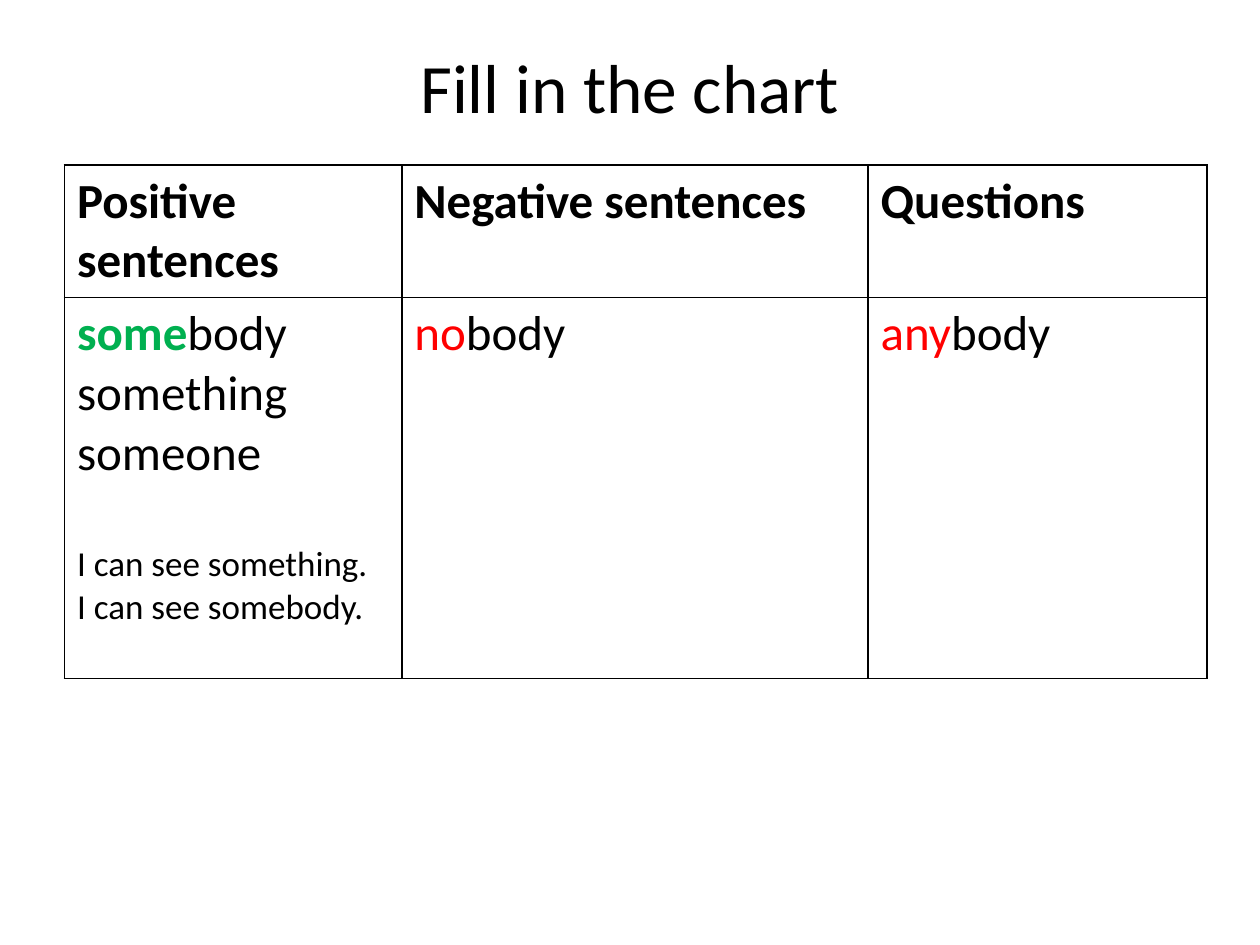
from lxml.etree import SubElement
from pptx import Presentation
from pptx.dml.color import RGBColor
from pptx.enum.text import MSO_ANCHOR, PP_ALIGN
from pptx.oxml.ns import qn
from pptx.util import Cm, Pt

FONT = "Calibri"
BLACK, GREEN, RED = "000000", "00B050", "FF0000"
TITLE = "Fill in the chart"

# Each cell is a list of paragraphs: (runs, size, space before);
# each run is (text, colour, bold)
HEADERS = [
    [([(text, BLACK, True)], 28, 0)]
    for text in ("Positive sentences", "Negative sentences", "Questions")
]
WORDS = [
    [
        ([("some", GREEN, True), ("body", BLACK, False)], 28, 0),
        ([("something", BLACK, False)], 28, 0),
        ([("someone", BLACK, False)], 28, 0),
        ([("I can see something.", BLACK, False)], 20, 34),
        ([("I can see somebody.", BLACK, False)], 20, 0),
    ],
    [([("no", RED, False), ("body", BLACK, False)], 28, 0)],
    [([("any", RED, False), ("body", BLACK, False)], 28, 0)],
]
ROWS = [HEADERS, WORDS]
COLUMN_WIDTHS = [6.8, 9.4, 6.83]
ROW_HEIGHTS = [2.67, 7.68]


def rgb(colour):
    return RGBColor.from_string(colour)


def format_run(run, size, colour, bold=False):
    run.font.name = FONT
    run.font.size = Pt(size)
    run.font.bold = bold
    run.font.color.rgb = rgb(colour)


def add_borders(cell, colour=BLACK, width=1):
    properties = cell._tc.get_or_add_tcPr()
    for side in ("a:lnL", "a:lnR", "a:lnT", "a:lnB"):
        line = SubElement(properties, qn(side), w=str(Pt(width)))
        fill = SubElement(line, qn("a:solidFill"))
        SubElement(fill, qn("a:srgbClr"), val=colour)


def fill_cell(cell, content):
    add_borders(cell)
    cell.fill.background()
    text_frame = cell.text_frame
    for index, (runs, size, space) in enumerate(content):
        paragraph = text_frame.add_paragraph() if index else text_frame.paragraphs[0]
        if space:
            paragraph.space_before = Pt(space)
        for text, colour, bold in runs:
            run = paragraph.add_run()
            run.text = text
            format_run(run, size, colour, bold)


presentation = Presentation()
presentation.slide_width, presentation.slide_height = Cm(25.4), Cm(19.05)
slide = presentation.slides.add_slide(presentation.slide_layouts[6])

# Title
title = slide.shapes.add_textbox(Cm(1.27), Cm(0.76), Cm(22.86), Cm(1.96))
text_frame = title.text_frame
text_frame.word_wrap = True
text_frame.vertical_anchor = MSO_ANCHOR.MIDDLE
text_frame.text = TITLE
paragraph = text_frame.paragraphs[0]
paragraph.alignment = PP_ALIGN.CENTER
format_run(paragraph.runs[0], 39.6, BLACK)

# Table
table = slide.shapes.add_table(
    len(ROWS), len(COLUMN_WIDTHS), Cm(1.3), Cm(3.33),
    Cm(sum(COLUMN_WIDTHS)), Cm(sum(ROW_HEIGHTS)),
).table
table.first_row = table.horz_banding = False
for column, width in zip(table.columns, COLUMN_WIDTHS):
    column.width = Cm(width)
for row, height, contents in zip(table.rows, ROW_HEIGHTS, ROWS):
    row.height = Cm(height)
    for cell, content in zip(row.cells, contents):
        fill_cell(cell, content)

presentation.save("out.pptx")
